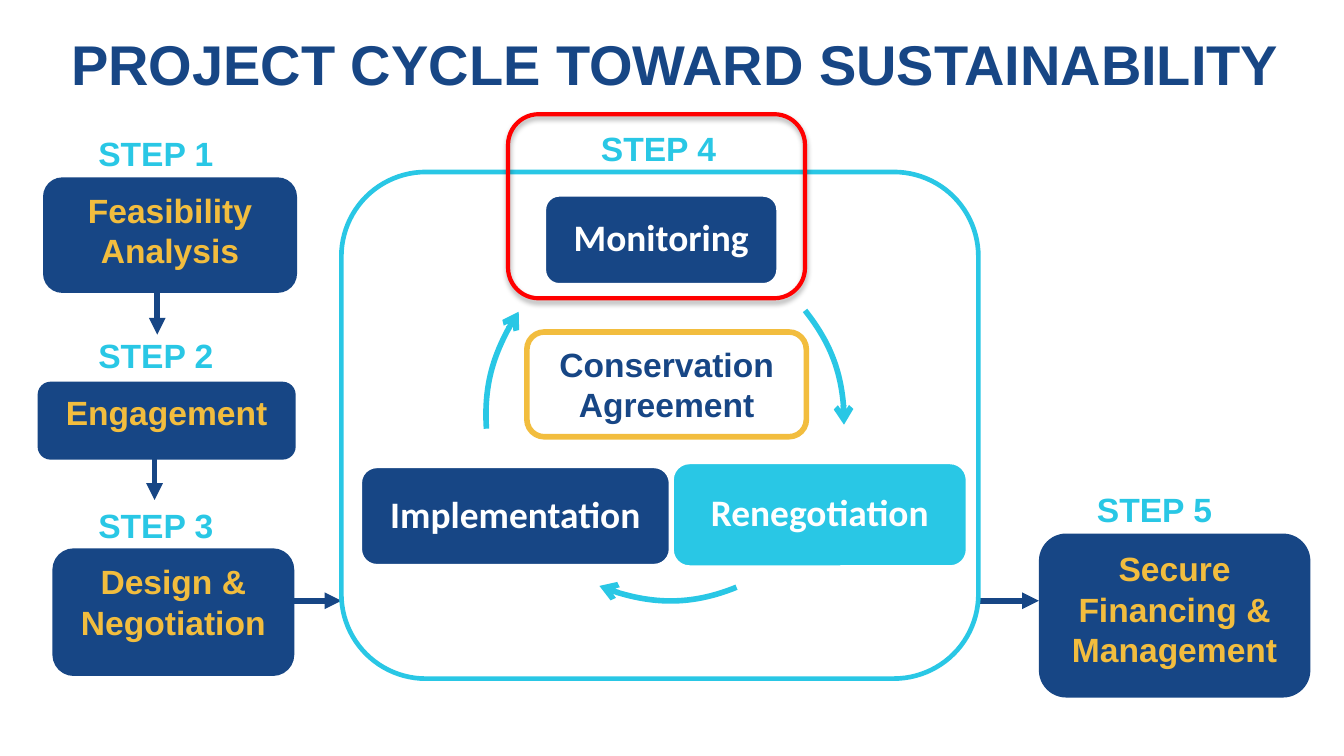
from typing import NamedTuple, Optional

from lxml.etree import SubElement
from pptx import Presentation
from pptx.dml.color import RGBColor
from pptx.enum.shapes import MSO_CONNECTOR as Connector, MSO_SHAPE as Shape
from pptx.enum.text import MSO_ANCHOR as Anchor, PP_ALIGN as Align
from pptx.oxml.ns import qn
from pptx.util import Pt

PX = 9144  # EMU per px, 100 px to the inch
SLIDE_WIDTH = 1000 * PX
SLIDE_HEIGHT = SLIDE_WIDTH * 9 // 16
NAVY = RGBColor(0x17, 0x46, 0x85)
CYAN = RGBColor(0x29, 0xC7, 0xE5)
GOLD = RGBColor(0xF2, 0xBD, 0x3E)
RED = RGBColor(0xFF, 0x00, 0x00)
WHITE = RGBColor(0xFF, 0xFF, 0xFF)


class Rect(NamedTuple):
    left: int
    top: int
    width: int
    height: int

    def emu(self) -> list[int]:
        return [side * PX for side in self]


class TextStyle(NamedTuple):
    color: RGBColor
    size: int = 18
    font: str = "Arial"
    anchor: Anchor = Anchor.TOP
    spacing: float = 1.0
    inset: Optional[tuple[int, int]] = None


class Box(NamedTuple):
    rect: Rect
    text: str = ""
    style: Optional[TextStyle] = None
    fill: Optional[RGBColor] = None
    line: Optional[RGBColor] = None
    line_width: float = 0


class Arrow(NamedTuple):
    start: tuple[int, int]
    end: tuple[int, int]


class CycleArc(NamedTuple):
    """A cubic curve: start, two control points, end."""
    start: tuple[int, int]
    control_1: tuple[int, int]
    control_2: tuple[int, int]
    end: tuple[int, int]


STEP_LABEL = TextStyle(CYAN)
STEP_NAME = TextStyle(GOLD)
AGREEMENT = TextStyle(NAVY)
TITLE = TextStyle(NAVY, 30, anchor=Anchor.MIDDLE, inset=(9, 4))
CYCLE_NAME = TextStyle(WHITE, 20, "Calibri", Anchor.MIDDLE, 0.9, (8, 8))

TITLE_RECT = Rect(25, 28, 955, 38)
CYCLE_FRAME = Box(Rect(254, 128, 474, 377), line=CYAN, line_width=2.5)
HIGHLIGHT = Box(Rect(378, 85, 221, 137), line=RED, line_width=2.25)

CYCLE_BOXES = [
    Box(Rect(405, 145, 174, 67), "Monitoring", CYCLE_NAME, NAVY, WHITE, 2),
    Box(Rect(500, 344, 220, 78), "Renegotiation", CYCLE_NAME, CYAN, WHITE, 2),
    Box(Rect(268, 347, 231, 74), "Implementation", CYCLE_NAME, NAVY, WHITE, 2),
]
CYCLE_ARCS = [
    CycleArc((599, 231), (618, 255), (629, 285), (628, 316)),
    CycleArc((548, 437), (516, 450), (479, 450), (446, 436)),
    CycleArc((362, 319), (360, 288), (369, 257), (386, 232)),
]
STEP_BOXES = [
    Box(Rect(32, 132, 189, 86), "Feasibility Analysis", STEP_NAME, NAVY),
    Box(Rect(28, 284, 192, 58), "Engagement", STEP_NAME, NAVY),
    Box(Rect(39, 408, 180, 95), "Design & Negotiation", STEP_NAME, NAVY),
    Box(Rect(392, 247, 208, 78), "Conservation Agreement", AGREEMENT, None, GOLD, 3),
    Box(Rect(773, 397, 202, 122), "Secure Financing & Management", STEP_NAME, NAVY),
]
STEP_LABEL_CORNERS = [(44, 94), (44, 244), (44, 371), (418, 90), (787, 359)]
STEP_ARROWS = [
    Arrow((117, 216), (117, 249)),
    Arrow((115, 330), (115, 372)),
    Arrow((191, 447), (254, 447)),
    Arrow((729, 447), (773, 447)),
]


def write_text(shape, text: str, style: TextStyle) -> None:
    frame = shape.text_frame
    frame.word_wrap = True
    frame.vertical_anchor = style.anchor
    if style.inset:
        across, down = style.inset
        frame.margin_left = frame.margin_right = across * PX
        frame.margin_top = frame.margin_bottom = down * PX
    frame.text = text
    paragraph = frame.paragraphs[0]
    paragraph.alignment = Align.CENTER
    paragraph.line_spacing = style.spacing
    font = paragraph.runs[0].font
    font.name, font.size, font.bold = style.font, Pt(style.size), True
    font.color.rgb = style.color


def add_label(slide, rect: Rect, text: str, style: TextStyle) -> None:
    write_text(slide.shapes.add_textbox(*rect.emu()), text, style)


def add_box(slide, box: Box):
    shape = slide.shapes.add_shape(Shape.ROUNDED_RECTANGLE, *box.rect.emu())
    shape.shadow.inherit = False
    if box.fill is None:
        shape.fill.background()
    else:
        shape.fill.solid()
        shape.fill.fore_color.rgb = box.fill
    if box.line is None:
        shape.line.fill.background()
    else:
        shape.line.color.rgb = box.line
        shape.line.width = Pt(box.line_width)
    if box.style:
        write_text(shape, box.text, box.style)
    return shape


def style_arrow(shape, color: RGBColor, head: str) -> None:
    shape.line.color.rgb = color
    shape.line.width = Pt(3)
    SubElement(shape.line._get_or_add_ln(), qn("a:tailEnd"), type=head)


def add_arrow(slide, arrow: Arrow) -> None:
    ends = [value * PX for value in arrow.start + arrow.end]
    connector = slide.shapes.add_connector(Connector.STRAIGHT, *ends)
    style_arrow(connector, NAVY, "triangle")
    SubElement(connector._element.spPr, qn("a:effectLst"))


def add_cycle_arc(slide, arc: CycleArc) -> None:
    builder = slide.shapes.build_freeform(*arc.start, scale=PX)
    builder.add_line_segments(arc[1:], close=False)
    shape = builder.convert_to_shape()
    shape.shadow.inherit = False
    shape.fill.background()
    style_arrow(shape, CYAN, "arrow")
    # Turn the three straight segments into one cubic curve.
    outline = next(shape._element.iter(qn("a:path")))
    segments = outline.findall(qn("a:lnTo"))
    curve = SubElement(outline, qn("a:cubicBezTo"))
    for segment in segments:
        curve.append(segment[0])
        outline.remove(segment)


def add_drop_shadow(shape) -> None:
    effects = shape._element.spPr.find(qn("a:effectLst"))
    shadow = SubElement(effects, qn("a:outerShdw"), blurRad=str(Pt(3.1)),
                        dist=str(Pt(1.8)), dir="5400000", rotWithShape="0")
    color = SubElement(shadow, qn("a:srgbClr"), val="000000")
    SubElement(color, qn("a:alpha"), val="35000")


def main() -> None:
    presentation = Presentation()
    presentation.slide_width = SLIDE_WIDTH
    presentation.slide_height = SLIDE_HEIGHT
    slide = presentation.slides.add_slide(presentation.slide_layouts[6])

    add_label(slide, TITLE_RECT, "PROJECT CYCLE TOWARD SUSTAINABILITY", TITLE)
    for box in CYCLE_BOXES:
        add_box(slide, box)
    for arc in CYCLE_ARCS:
        add_cycle_arc(slide, arc)
    for arrow in STEP_ARROWS:
        add_arrow(slide, arrow)
    add_box(slide, CYCLE_FRAME)
    for box in STEP_BOXES:
        add_box(slide, box)
    for number, corner in enumerate(STEP_LABEL_CORNERS, start=1):
        add_label(slide, Rect(*corner, 144, 33), f"STEP {number}", STEP_LABEL)
    add_drop_shadow(add_box(slide, HIGHLIGHT))

    presentation.save("out.pptx")


if __name__ == "__main__":
    main()
